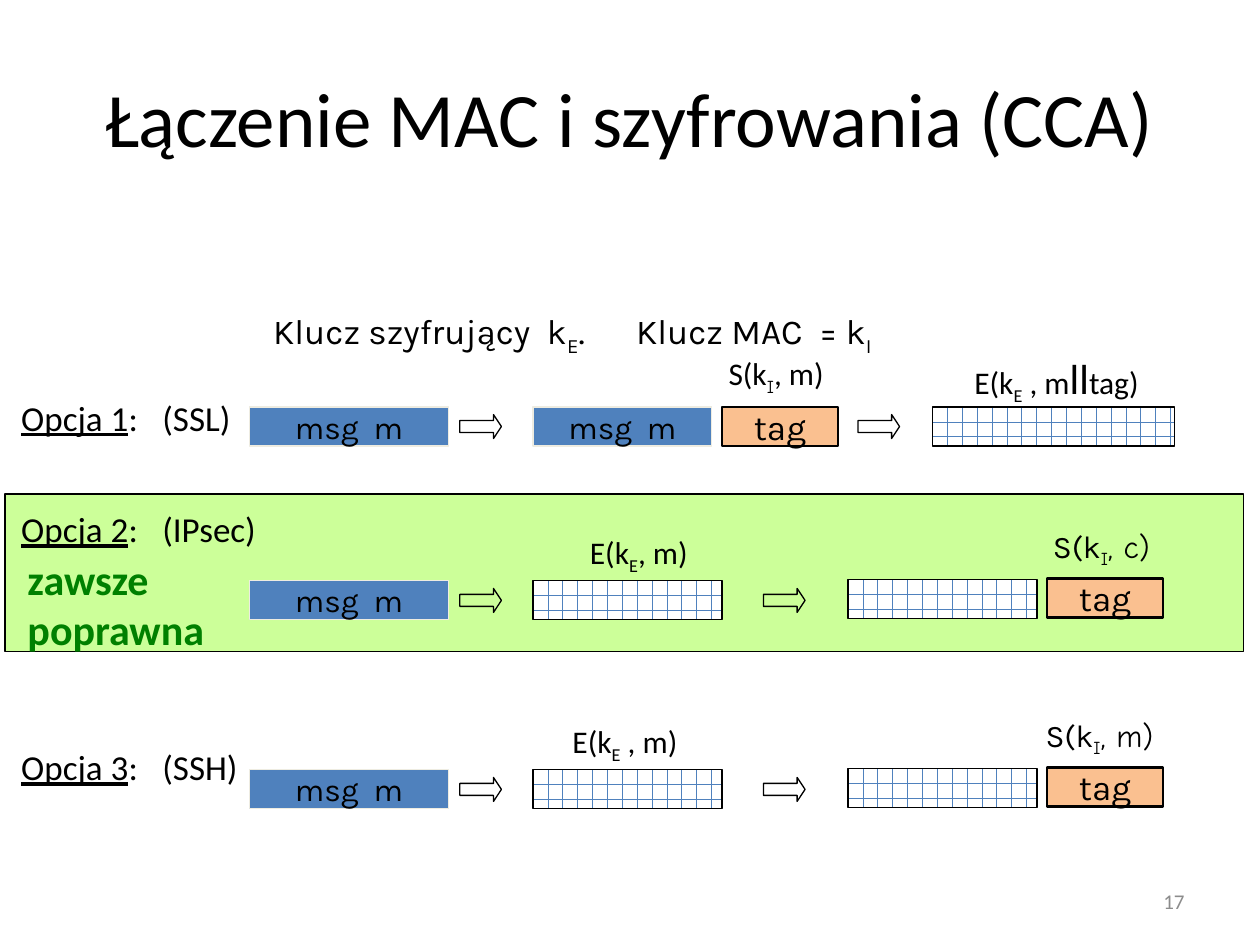
import pptx
import pptx.util
import pptx.dml.color
import pptx.enum.dml
import pptx.enum.shapes
import pptx.enum.text
import pptx.oxml
import pptx.oxml.ns

Inches = pptx.util.Inches
Pt = pptx.util.Pt
RGB = pptx.dml.color.RGBColor
SHAPE = pptx.enum.shapes.MSO_SHAPE
ALIGN = pptx.enum.text.PP_ALIGN
ANCHOR = pptx.enum.text.MSO_ANCHOR
FIT = pptx.enum.text.MSO_AUTO_SIZE

BLACK = RGB(0x00, 0x00, 0x00)
WHITE = RGB(0xFF, 0xFF, 0xFF)
GREY = RGB(0x8C, 0x8C, 0x8C)
BLUE = RGB(0x4F, 0x81, 0xBD)
CREAM = RGB(0xEE, 0xEC, 0xE1)
PEACH = RGB(0xFA, 0xC0, 0x90)
LIME = RGB(0xCC, 0xFF, 0x99)
GREEN = RGB(0x00, 0x80, 0x00)

SUB = {"sub": True}
COMIC = {"font": "Comic Neue"}
COMIC_SUB = {**COMIC, **SUB}


def style(run, size=18, font="Calibri", color=BLACK, bold=False, under=False, sub=False):
    """Format one run."""
    run.font.size, run.font.name = Pt(size), font
    run.font.color.rgb = color
    run.font.bold, run.font.underline = bold, under
    for tag in ("ea", "cs"):
        mark = pptx.oxml.parse_xml(
            f'<a:{tag} {pptx.oxml.ns.nsdecls("a")} typeface="{font}"/>')
        run.font._element.append(mark)
    if sub:
        run.font._element.set("baseline", "-25000")


def write(para, text, align=ALIGN.CENTER, before=0, tabs=(), **look):
    """Fill a paragraph from a string or a list of (text, format) runs."""
    para.alignment, para.space_before = align, Pt(before)
    if tabs:
        stops = "".join(f'<a:tab pos="{Inches(at)}" algn="l"/>' for at in tabs)
        para._p.get_or_add_pPr().append(pptx.oxml.parse_xml(
            f'<a:tabLst {pptx.oxml.ns.nsdecls("a")}>{stops}</a:tabLst>'))
    for part, extra in [(text, {})] if isinstance(text, str) else text:
        run = para.add_run()
        run.text = part
        style(run, **{**look, **extra})


def frame(slide, x, y, w, h, wrap=True, anchor=ANCHOR.TOP):
    """Add an empty text box and return its text frame."""
    body = slide.shapes.add_textbox(
        Inches(x), Inches(y), Inches(w), Inches(h)).text_frame
    body.word_wrap, body.vertical_anchor = wrap, anchor
    body.auto_size = FIT.NONE if wrap else FIT.SHAPE_TO_FIT_TEXT
    return body


def block(slide, x, y, w, h, fill=None, line=BLACK, width=0.75, kind=SHAPE.RECTANGLE):
    """Add an outlined shape, filled with a colour or left clear."""
    shape = slide.shapes.add_shape(kind, Inches(x), Inches(y), Inches(w), Inches(h))
    shape.shadow.inherit = False
    shape.line.color.rgb, shape.line.width = line, Pt(width)
    if fill is None:
        shape.fill.background()
    else:
        shape.fill.solid()
        shape.fill.fore_color.rgb = fill
    return shape


def named(shape, text, size):
    """Centre a Karla caption in a shape."""
    body = shape.text_frame
    body.word_wrap, body.vertical_anchor = False, ANCHOR.MIDDLE
    write(body.paragraphs[0], text, size=size, font="Karla")


def msg(slide, x, y, w):
    """Draw a plain message block."""
    named(block(slide, x, y, w, 0.31, BLUE, CREAM), "msg  m", 18)


def tag(slide, x, y):
    """Draw a tag block."""
    named(block(slide, x, y, 0.92, 0.31, PEACH, width=1.5), "tag", 20)


def brick(slide, x, y, w):
    """Draw an encrypted block."""
    fill = block(slide, x, y, w, 0.31).fill
    fill.patterned()
    fill.pattern = pptx.enum.dml.MSO_PATTERN.HORIZONTAL_BRICK
    fill.fore_color.rgb, fill.back_color.rgb = BLUE, WHITE


def arrow(slide, x, y):
    """Draw a step arrow."""
    shape = block(slide, x, y + 0.06, 0.33, 0.19, kind=SHAPE.RIGHT_ARROW)
    shape.adjustments[1] = 0.33


def label(slide, x, y, w, text, h=0.4, **look):
    """Place a formula above a block."""
    write(frame(slide, x, y, w, h, wrap=False).paragraphs[0], text, **look)


def start(slide, x, y):
    """Draw the message and first arrow that open each row."""
    msg(slide, x, y, 1.58)
    arrow(slide, x + 1.67, y)


def signed(slide, x, y):
    """Draw the row that tags first and then encrypts."""
    start(slide, x, y)
    msg(slide, x + 2.25, y, 1.42)
    tag(slide, x + 3.75, y)
    arrow(slide, x + 4.83, y)
    brick(slide, x + 5.42, y, 1.92)
    label(slide, x + 5.64, y - 0.48, 1.53, [
        ("E(k", {}), ("E", SUB), (" , m", {}), ("ll", {"size": 24}), ("tag)", {})], h=0.5)
    label(slide, x + 3.68, y - 0.47, 1, [("S(k", {}), ("I", COMIC_SUB), (", m)", {})])


def sealed(slide, x, y, code, sign):
    """Draw a row that encrypts first; code and sign are (left, width, ending)."""
    start(slide, x, y)
    brick(slide, x + 2.25, y, 1.5)
    arrow(slide, x + 4.08, y)
    brick(slide, x + 4.75, y - 0.01, 1.5)
    tag(slide, x + 6.33, y - 0.02)
    left, width, end = code
    label(slide, x + left, y - 0.43, width, [("E(k", {}), ("E", SUB), (end, {})])
    left, width, end = sign
    label(slide, x + left, y - 0.48, width,
          [("S(k", {}), ("I", COMIC_SUB), (end, COMIC)], font="Karla")


def outline(slide, x, y, w, h):
    """Write the key line and the three options."""
    body = frame(slide, x, y, w, h)
    write(body.paragraphs[0], [
        ("\tKlucz szyfrujący  k", {}), ("E", SUB),
        (".\tKlucz MAC  = k", {}), ("I", SUB)],
        align=ALIGN.LEFT, size=20, font="Karla", tabs=(2, 4.88))
    options = (("SSL", 22), ("IPsec", 39.6), ("SSH", 112))
    for num, (name, before) in enumerate(options, 1):
        write(body.add_paragraph(),
              [(f"Opcja {num}", {"under": True}), (f":\t({name})", {})],
              align=ALIGN.LEFT, size=20, before=before, tabs=(1.12,))


def verdict(slide, x, y, w, h):
    """Write the green remark on the best option."""
    body = frame(slide, x, y, w, h, wrap=False)
    for para, word in ((body.paragraphs[0], "zawsze"), (body.add_paragraph(), "poprawna")):
        write(para, word, align=ALIGN.LEFT, size=24, color=GREEN, bold=True)


def main():
    """Build the slide and save it."""
    deck = pptx.Presentation()
    deck.slide_width, deck.slide_height = Inches(10), Inches(7.5)
    slide = deck.slides.add_slide(deck.slide_layouts[6])
    head = frame(slide, 0.5, 0.3, 9, 1.25, anchor=ANCHOR.MIDDLE)
    write(head.paragraphs[0], "Łączenie MAC i szyfrowania (CCA)", size=44)
    foot = frame(slide, 7.17, 6.95, 2.33, 0.4, anchor=ANCHOR.MIDDLE)
    write(foot.paragraphs[0], "17", align=ALIGN.RIGHT, size=12, color=GREY)
    block(slide, 0.04, 3.92, 9.83, 1.25, LIME)
    outline(slide, 0.07, 2.41, 8.94, 4.56)
    signed(slide, 1.98, 3.23)
    sealed(slide, 1.98, 4.61, (2.59, 1, ", m)"), (6.25, 1.02, ", c)"))
    sealed(slide, 1.98, 6.11, (2.45, 1.06, " , m)"), (6.2, 1.09, ", m)"))
    verdict(slide, 0.12, 4.34, 1.63, 0.91)
    deck.save("out.pptx")


if __name__ == "__main__":
    main()
